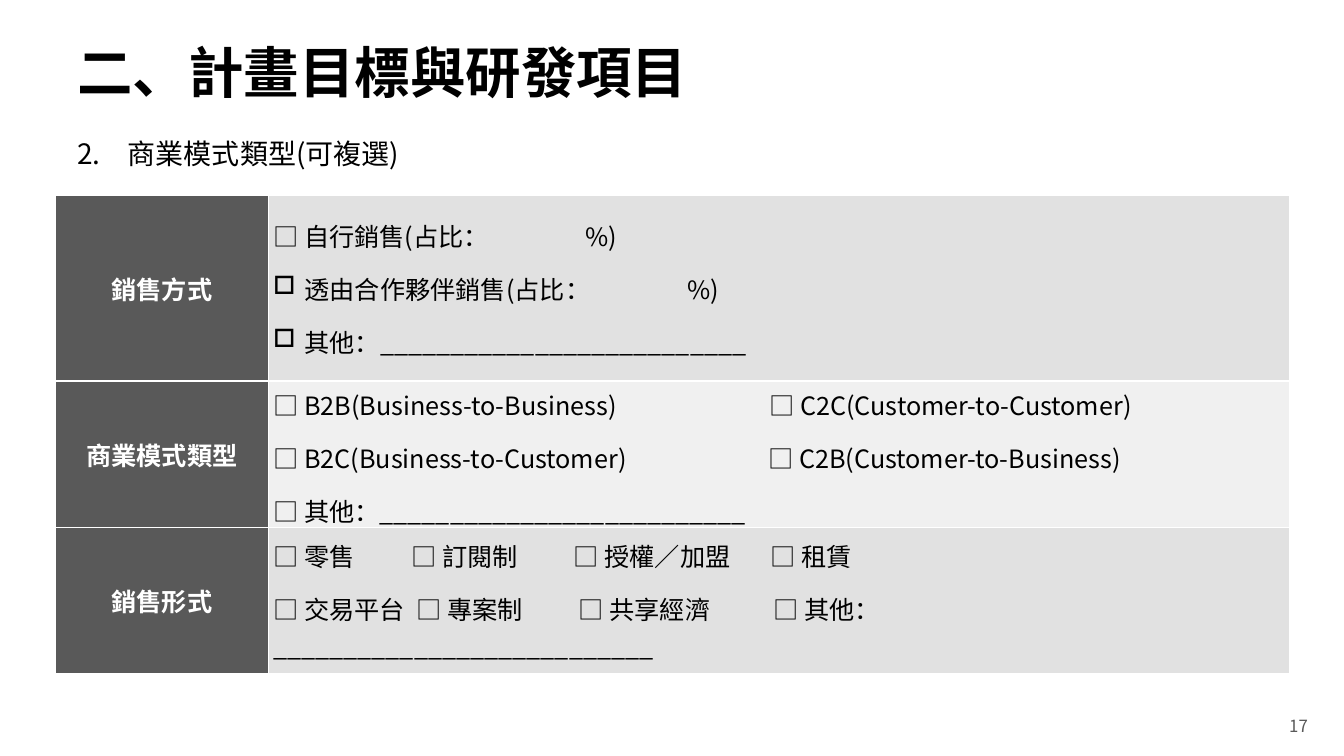
"""Build the slide on sales methods, business models and sales forms."""
from dataclasses import dataclass
from lxml.etree import SubElement as Sub
from pptx import Presentation
from pptx.dml.color import RGBColor as RGB
from pptx.enum.text import MSO_ANCHOR as Anchor, PP_ALIGN as Align
from pptx.oxml.ns import qn
from pptx.util import Inches, Pt


@dataclass
class Theme:
    font: str = "Noto Sans CJK SC"
    ink: str = "000000"
    pale: str = "FFFFFF"
    dark: str = "595959"
    band: tuple = ("E1E1E1", "F0F0F0")
    title: float = 39.6
    lead: int = 20
    body: int = 18
    small: int = 12


theme = Theme()


def write(par, text, size, color, bold=False):
    for i, part in enumerate(text.split("\n")):
        if i:
            par.add_line_break()
        run = par.add_run()
        run.text = part
        font = run.font
        font.size, font.bold = Pt(size), bold
        font.color.rgb = RGB.from_string(color)
        font.name = theme.font
        Sub(font._element, qn("a:ea"), typeface=theme.font)


def label(left, top, width, height, anchor):
    frame = slide.shapes.add_textbox(*map(Inches, (left, top, width, height))).text_frame
    frame.word_wrap = True
    frame.vertical_anchor = anchor
    return frame.paragraphs[0]


deck = Presentation()
deck.slide_width, deck.slide_height = Inches(13.33), Inches(7.5)
slide = deck.slides.add_slide(deck.slide_layouts[6])

head = label(0.67, 0.38, 12, 0.73, Anchor.MIDDLE)
head.line_spacing = 0.9
write(head, "二、計畫目標與研發項目", theme.title, theme.ink, True)

page = label(10.07, 7.08, 3, 0.24, Anchor.MIDDLE)
page.alignment = Align.RIGHT
write(page, "17", theme.small, theme.dark)

lead = label(0.67, 1.31, 12, 0.5, Anchor.TOP)
lead.alignment = Align.JUSTIFY
lead.space_before = lead.space_after = Pt(6)
props = lead._p.get_or_add_pPr()
props.set("marL", str(Inches(0.5)))
props.set("indent", str(Inches(-0.5)))
Sub(props, qn("a:buAutoNum"), type="arabicPeriod", startAt="2")
write(lead, "商業模式類型(可複選)", theme.lead, theme.ink)

blank = "_" * 26
rows = [
    (1.84, "銷售方式", [
        ("□ 自行銷售(占比：\t%)", False, [3.1]),
        ("透由合作夥伴銷售(占比：\t%)", True, [4.11]),
        (f"其他：{blank}", True, []),
    ]),
    (1.45, "商業模式類型", [
        ("□ B2B(Business-to-Business)\t□ C2C(Customer-to-Customer)", False, [4.92]),
        ("□ B2C(Business-to-Customer)\t□ C2B(Customer-to-Business)", False, [4.91]),
        (f"□ 其他：{blank}", False, []),
    ]),
    (1.45, "銷售形式", [
        ("□ 零售\t□ 訂閱制\t□ 授權／加盟\t□ 租賃", False, [1.37, 2.98, 4.93]),
        (f"□ 交易平台\t□ 專案制\t□ 共享經濟\t□ 其他：\n{blank}_", False, [1.42, 3.03, 4.96]),
    ]),
]

grid = slide.shapes.add_table(3, 2, Inches(0.55), Inches(1.94), Inches(12.24), Inches(4.74)).table
grid.first_row = grid.horz_banding = False
for col, width in zip(grid.columns, (2.11, 10.13)):
    col.width = Inches(width)

for r, (height, name, items) in enumerate(rows):
    grid.rows[r].height = Inches(height)
    fills = theme.dark, theme.band[r % 2]
    for cell, fill in zip(grid.rows[r].cells, fills):
        cell.vertical_anchor = Anchor.MIDDLE
        cell.margin_left = cell.margin_right = Inches(0.05)
        cell.margin_top = cell.margin_bottom = Inches(0.05)
        box = cell._tc.get_or_add_tcPr()
        for side in ("lnL", "lnR", "lnT", "lnB"):
            line = Sub(box, qn(f"a:{side}"), w=str(Pt(1)))
            Sub(Sub(line, qn("a:solidFill")), qn("a:srgbClr"), val=theme.pale)
        cell.fill.solid()
        cell.fill.fore_color.rgb = RGB.from_string(fill)

    par = grid.cell(r, 0).text_frame.paragraphs[0]
    par.alignment = Align.CENTER
    par.space_before = par.space_after = Pt(6)
    write(par, name, theme.body, theme.pale, True)

    frame = grid.cell(r, 1).text_frame
    for i, (text, mark, stops) in enumerate(items):
        par = frame.add_paragraph() if i else frame.paragraphs[0]
        par.space_before = par.space_after = Pt(6)
        props = par._p.get_or_add_pPr()
        if mark:
            props.set("marL", str(Inches(0.31)))
            props.set("indent", str(Inches(-0.31)))
            Sub(props, qn("a:buChar"), char="□")
        if stops:
            tabs = Sub(props, qn("a:tabLst"))
            for stop in stops:
                Sub(tabs, qn("a:tab"), pos=str(Inches(stop)), algn="l")
        write(par, text, theme.body, theme.ink)

deck.save("out.pptx")
